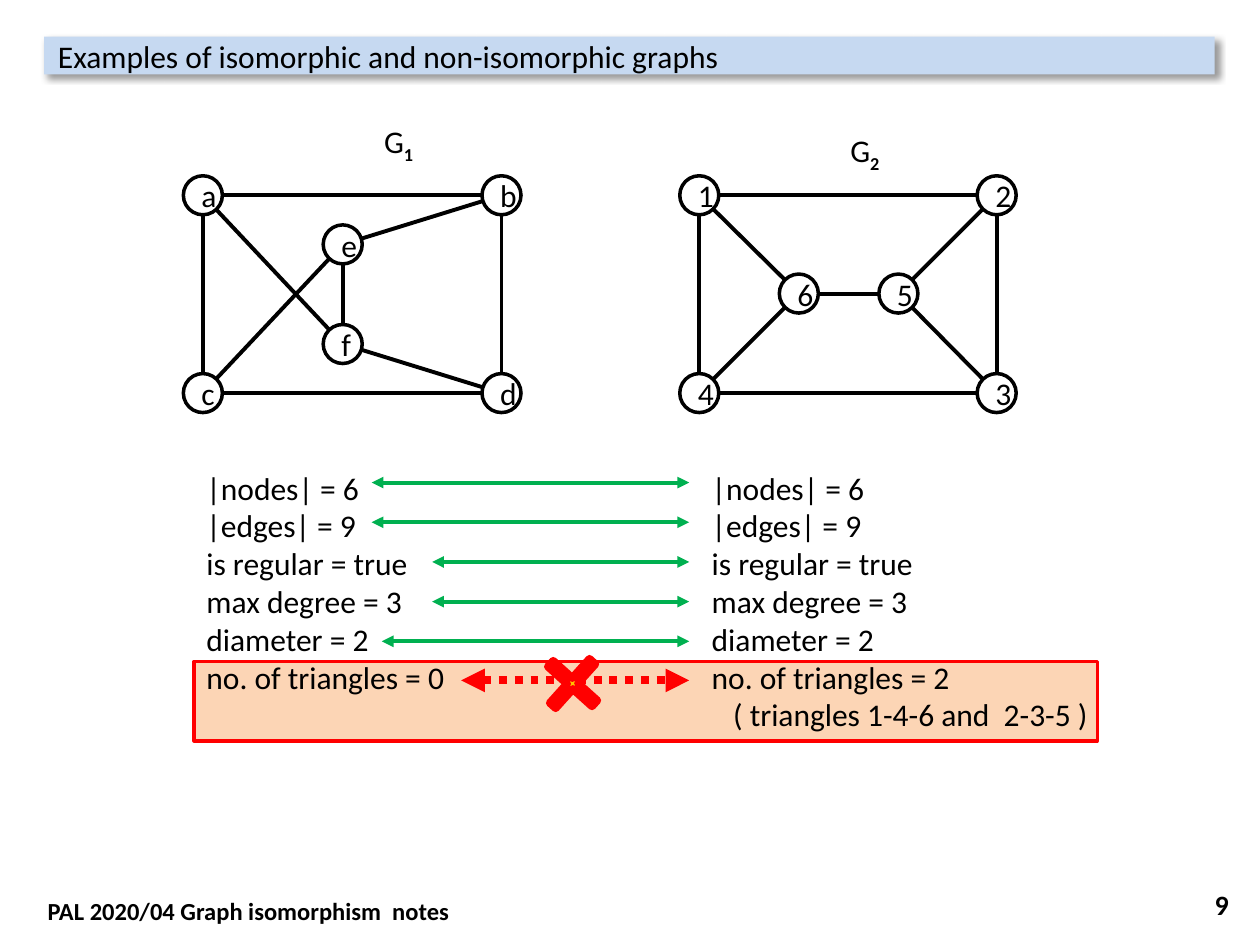
import pptx
import pptx.dml.color
import pptx.enum.dml
import pptx.enum.shapes
import pptx.enum.text
import pptx.oxml
import pptx.oxml.ns
import pptx.util

Inches, Pt = pptx.util.Inches, pptx.util.Pt
RGBColor = pptx.dml.color.RGBColor
MSO_SHAPE = pptx.enum.shapes.MSO_SHAPE
PP_ALIGN = pptx.enum.text.PP_ALIGN
MSO_ANCHOR = pptx.enum.text.MSO_ANCHOR

BLACK = RGBColor(0x00, 0x00, 0x00)
WHITE = RGBColor(0xFF, 0xFF, 0xFF)
PALE_BLUE = RGBColor(0xC6, 0xD9, 0xF1)
PEACH = RGBColor(0xFC, 0xD5, 0xB5)
RED = RGBColor(0xFF, 0x00, 0x00)
GREEN = RGBColor(0x00, 0xB0, 0x50)
AMBER = RGBColor(0xFF, 0xC0, 0x00)

NSDECL = pptx.oxml.ns.nsdecls("a")
NODE_SIZE = 0.31
LEFT, RIGHT = 1.54, 5.55
ARROW_END = 5.47

prs = pptx.Presentation()
prs.slide_width, prs.slide_height = Inches(10), Inches(7.5)
s = prs.slides.add_slide(prs.slide_layouts[5])


def add_line(start, end, color, width, arrows=False):
    c = s.shapes.add_connector(pptx.enum.shapes.MSO_CONNECTOR.STRAIGHT,
                               *[Inches(v) for v in (*start, *end)])
    c.line.color.rgb = color
    c.line.width = Pt(width)
    if arrows:
        ln = c.line._get_or_add_ln()
        for end_tag in ("headEnd", "tailEnd"):
            ln.append(pptx.oxml.parse_xml(f'<a:{end_tag} {NSDECL} type="triangle"/>'))
    c._element.spPr.append(pptx.oxml.parse_xml(f"<a:effectLst {NSDECL}/>"))
    return c


def add_text(left, top, width, height, lines, size=18, bold=False):
    sp = s.shapes.add_textbox(*[Inches(v) for v in (left, top, width, height)])
    tf = sp.text_frame
    tf.word_wrap = True
    tf.text = "\n".join(lines)
    for p in tf.paragraphs:
        p.font.name, p.font.size, p.font.bold = "Calibri", Pt(size), bold
        p.font.color.rgb = BLACK
    return tf


# Title bar
title = s.shapes.title
title.left, title.top = Inches(0.35), Inches(0.29)
title.width, title.height = Inches(9.29), Inches(0.3)
title.fill.solid()
title.fill.fore_color.rgb = PALE_BLUE
title._element.spPr.append(pptx.oxml.parse_xml(
    f'<a:effectLst {NSDECL}><a:outerShdw blurRad="{Pt(4)}" dist="{Pt(3)}" dir="2700000"'
    ' algn="tl" rotWithShape="0"><a:srgbClr val="000000"><a:alpha val="40000"/>'
    "</a:srgbClr></a:outerShdw></a:effectLst>"))
tf = title.text_frame
tf.text = "Examples of isomorphic and non-isomorphic graphs"
tf.vertical_anchor = MSO_ANCHOR.MIDDLE
tf.margin_left = Inches(0.11)
tf.margin_right = tf.margin_top = tf.margin_bottom = 0
p = tf.paragraphs[0]
p.alignment = PP_ALIGN.LEFT
p.font.name, p.font.size = "Calibri", Pt(18)
p.font.color.rgb = BLACK

# Highlight behind the property that differs
highlight = s.shapes.add_shape(MSO_SHAPE.RECTANGLE, Inches(LEFT), Inches(5.25),
                               Inches(7.17), Inches(0.63))
highlight.shadow.inherit = False
highlight.fill.solid()
highlight.fill.fore_color.rgb = PEACH
highlight.line.color.rgb = RED
highlight.line.width = Pt(2)

# Graphs: node centres and edges
graphs = [
    ({"a": (1.61, 1.55), "b": (3.98, 1.55), "c": (1.61, 3.12),
      "d": (3.98, 3.12), "e": (2.72, 1.94), "f": (2.72, 2.73)},
     "ab cd bd ac ef eb fd ce af"),
    ({"1": (5.55, 1.55), "2": (7.91, 1.55), "3": (7.91, 3.12),
      "4": (5.55, 3.12), "5": (7.13, 2.33), "6": (6.34, 2.33)},
     "12 43 32 41 65 52 53 46 16"),
]
for nodes, edges in graphs:
    for start, end in edges.split():
        add_line(nodes[start], nodes[end], BLACK, 2.25)
    for name, (x, y) in nodes.items():
        sp = s.shapes.add_shape(MSO_SHAPE.OVAL, Inches(x - NODE_SIZE / 2),
                                Inches(y - NODE_SIZE / 2),
                                Inches(NODE_SIZE), Inches(NODE_SIZE))
        sp.shadow.inherit = False
        sp.fill.solid()
        sp.fill.fore_color.rgb = WHITE
        sp.line.color.rgb = BLACK
        sp.line.width = Pt(2)
        tf = sp.text_frame
        tf.text = name
        tf.vertical_anchor = MSO_ANCHOR.MIDDLE
        p = tf.paragraphs[0]
        p.alignment = PP_ALIGN.CENTER
        p.font.name, p.font.size = "Calibri", Pt(18)
        p.font.color.rgb = BLACK

for left, top, index in ((2.95, 0.92, "1"), (6.65, 0.99, "2")):
    p = add_text(left, top, 0.55, 0.4, ["G"]).paragraphs[0]
    r = p.add_run()
    r.text = index
    r.font.bold = True
    r.font._element.set("baseline", "-25000")

# Compared properties
shared = ["|nodes| = 6", "|edges| = 9", "is regular = true",
          "max degree = 3", "diameter = 2"]
add_text(LEFT, 3.67, 2.44, 1.92, shared + ["no. of triangles = 0"])
tf = add_text(RIGHT, 3.67, 3.78, 2.22,
              shared + ["no. of triangles = 2", "( triangles 1-4-6 and  2-3-5 )"])
tf.paragraphs[-1]._p.get_or_add_pPr().set("marL", str(Inches(0.17)))

for i, start in enumerate((2.95, 2.95, 3.43, 3.43, 3.03)):
    y = 3.83 + 0.315 * i
    add_line((start, y), (ARROW_END, y), GREEN, 2.25, arrows=True)
mismatch = add_line((3.66, 5.4), (ARROW_END, 5.4), RED, 4.5, arrows=True)
mismatch.line.dash_style = pptx.enum.dml.MSO_LINE.ROUND_DOT

cross = s.shapes.add_shape(MSO_SHAPE.CROSS, Inches(4.31), Inches(5.19),
                           Inches(0.47), Inches(0.47))
cross.shadow.inherit = False
cross.adjustments[0] = 0.434
cross.rotation = 312
cross.fill.solid()
cross.fill.fore_color.rgb = AMBER
cross.line.color.rgb = RED
cross.line.width = Pt(4.5)

# Footer
add_text(0.28, 7.06, 9.37, 0.34, ["PAL 2020/04 Graph isomorphism  notes"], 14, True)
tf = add_text(7.52, 6.98, 2.33, 0.4, ["9"], 16, True)
tf.vertical_anchor = MSO_ANCHOR.MIDDLE
tf.paragraphs[0].alignment = PP_ALIGN.RIGHT

prs.save("out.pptx")
